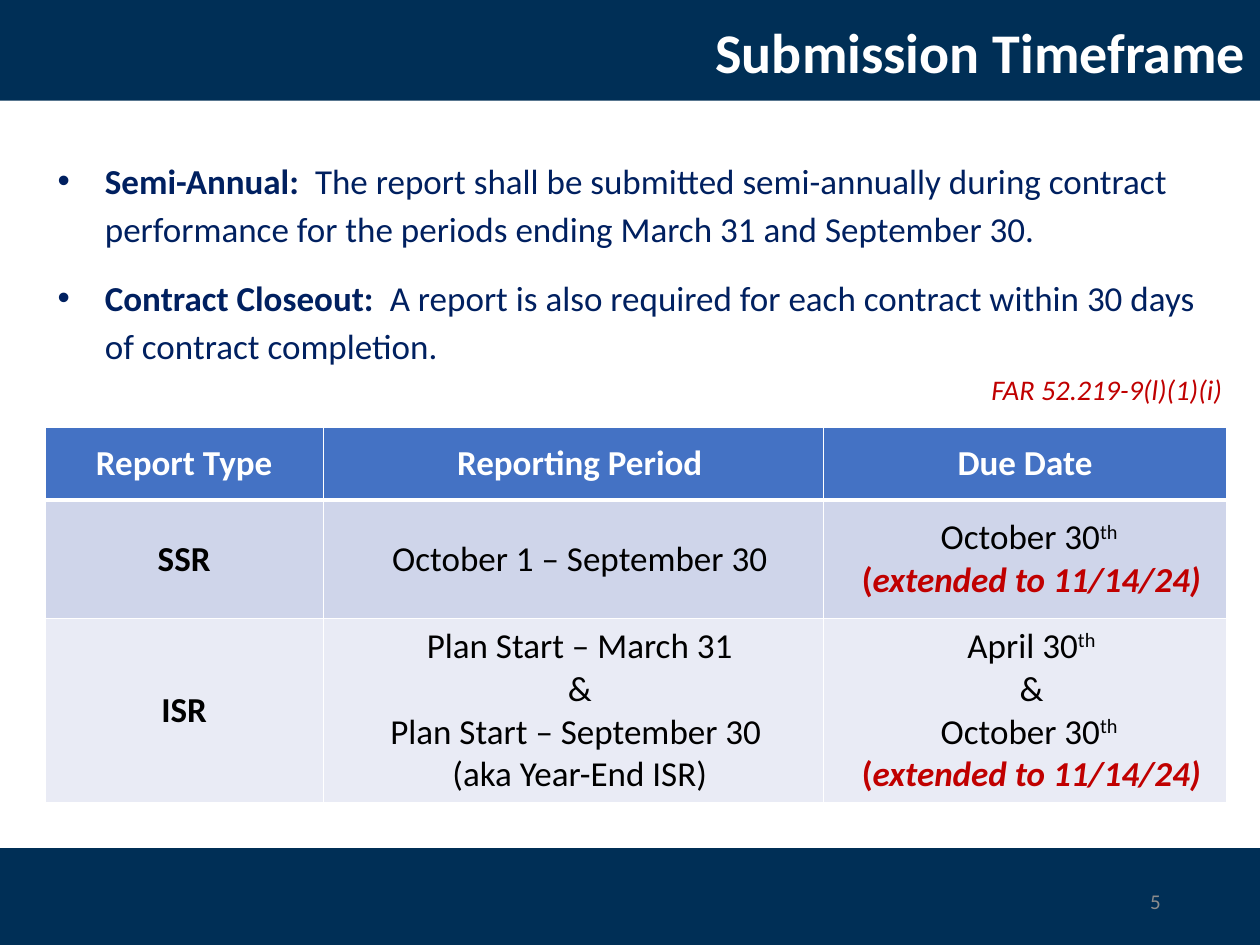
from dataclasses import dataclass

from lxml.etree import SubElement
from pptx import Presentation
from pptx.dml.color import RGBColor
from pptx.enum.shapes import MSO_SHAPE
from pptx.enum.text import MSO_ANCHOR, MSO_AUTO_SIZE, PP_ALIGN
from pptx.oxml.ns import qn
from pptx.util import Cm, Pt


@dataclass(frozen=True)
class Theme:
    font: str = "Calibri"
    band: str = "002F56"
    body: str = "002060"
    accent: str = "C00000"
    header: str = "4472C4"
    rows: tuple = ("CFD5EA", "E9EBF5")
    white: str = "FFFFFF"
    black: str = "000000"
    muted: str = "8C8C8C"
    title_size: int = 32
    text_size: int = 20
    cite_size: int = 28
    number_size: int = 12


class SlideBuilder:
    """Holds the theme and the current slide and draws each kind of element."""

    def __init__(self, s, theme):
        self.s, self.theme = s, theme

    def place(self, sp, x, y, w, h):
        sp.left, sp.top, sp.width, sp.height = Cm(x), Cm(y), Cm(w), Cm(h)

    def add_runs(self, p, runs, size, color, align=PP_ALIGN.LEFT):
        p.alignment = align
        for text, style in runs:
            r = p.add_run()
            r.text = text
            f = r.font
            f.name, f.size = self.theme.font, Pt(size)
            f.bold, f.italic = "b" in style, "i" in style
            f.color.rgb = RGBColor.from_string(self.theme.accent if "!" in style else color)
            if "^" in style:
                r._r.get_or_add_rPr().set("baseline", "30000")

    def paragraphs(self, tf, count):
        return [tf.paragraphs[0]] + [tf.add_paragraph() for _ in range(count - 1)]

    def band(self, y, h):
        sp = self.s.shapes.add_shape(MSO_SHAPE.RECTANGLE, 0, Cm(y), Cm(25.4), Cm(h))
        sp.shadow.inherit = False
        sp.fill.solid()
        sp.fill.fore_color.rgb = RGBColor.from_string(self.theme.band)
        sp.line.fill.background()
        sp.element.getparent().insert(2, sp.element)

    def title(self, text, *box):
        sp = self.s.shapes.title
        self.place(sp, *box)
        tf = sp.text_frame
        tf.auto_size, tf.vertical_anchor = MSO_AUTO_SIZE.NONE, MSO_ANCHOR.MIDDLE
        p = tf.paragraphs[0]
        p.line_spacing = 0.9
        self.add_runs(p, [(text, "b")], self.theme.title_size, self.theme.white, PP_ALIGN.RIGHT)

    def body(self, items, citation, *box):
        sp = self.s.placeholders[1]
        self.place(sp, *box)
        tf = sp.text_frame
        tf.auto_size, tf.vertical_anchor = MSO_AUTO_SIZE.NONE, MSO_ANCHOR.TOP
        *points, cite = self.paragraphs(tf, len(items) + 1)
        for p, (lead, text) in zip(points, items):
            self.bullet(p, Cm(0.95), "•")
            p.line_spacing = 1.14
            p.space_after = Pt(12 if p is not points[-1] else 0)
            self.add_runs(p, [(lead, "b"), (text, "")], self.theme.text_size, self.theme.body)
        self.bullet(cite, 0)
        self.add_runs(cite, [(citation, "i^!")], self.theme.cite_size, self.theme.body,
                      PP_ALIGN.RIGHT)

    def bullet(self, p, indent, char=None):
        p.space_before = Pt(0)
        pPr = p._p.get_or_add_pPr()
        pPr.set("marL", str(indent))
        pPr.set("indent", str(-indent))
        if char:
            SubElement(pPr, qn("a:buFont"), typeface="Arial")
            SubElement(pPr, qn("a:buChar"), char=char)
        else:
            SubElement(pPr, qn("a:buNone"))

    def borders(self, cell, row):
        tcPr = cell._tc.get_or_add_tcPr()
        widths = {"L": 1, "R": 1, "T": 3 if row == 1 else 1, "B": 3 if row == 0 else 1}
        for side, width in widths.items():
            ln = SubElement(tcPr, qn(f"a:ln{side}"), w=str(Pt(width)))
            SubElement(SubElement(ln, qn("a:solidFill")), qn("a:srgbClr"), val=self.theme.white)

    def table(self, rows, x, y, widths, heights):
        t = self.theme
        table = self.s.shapes.add_table(len(rows), len(widths), Cm(x), Cm(y),
                                        Cm(sum(widths)), Cm(sum(heights))).table
        for column, w in zip(table.columns, widths):
            column.width = Cm(w)
        for i, (row, h) in enumerate(zip(rows, heights)):
            table.rows[i].height = Cm(h)
            for j, lines in enumerate(row):
                cell = table.cell(i, j)
                self.borders(cell, i)
                cell.fill.solid()
                cell.fill.fore_color.rgb = RGBColor.from_string(t.rows[i - 1] if i else t.header)
                cell.vertical_anchor = MSO_ANCHOR.MIDDLE
                wide = j == 1 or (i and j == 2)
                cell.margin_left = Cm(0.51 if wide else 0.25)
                for p, runs in zip(self.paragraphs(cell.text_frame, len(lines)), lines):
                    self.add_runs(p, runs, t.text_size, t.black if i else t.white,
                                  PP_ALIGN.CENTER)

    def number(self, text, *box):
        sp = self.s.shapes.add_textbox(*map(Cm, box))
        tf = sp.text_frame
        tf.word_wrap, tf.vertical_anchor = True, MSO_ANCHOR.MIDDLE
        self.add_runs(tf.paragraphs[0], [(text, "")], self.theme.number_size, self.theme.muted,
                      PP_ALIGN.RIGHT)


def main():
    prs = Presentation()
    prs.slide_width, prs.slide_height = Cm(25.4), Cm(19.05)
    b = SlideBuilder(prs.slides.add_slide(prs.slide_layouts[1]), Theme())
    b.band(17.1, 1.95)
    b.band(0, 2.03)
    b.title("Submission Timeframe", 6.55, 0.13, 18.82, 1.96)
    b.body([
        ("Semi-Annual:  ", "The report shall be submitted semi-annually during contract "
                           "performance for the periods ending March 31 and September 30."),
        ("Contract Closeout:  ", "A report is also required for each contract within 30 days "
                                 "of contract completion."),
    ], "FAR 52.219-9(l)(1)(i)", 0.91, 2.97, 23.98, 5.64)

    both = [("&", "")]
    october = [("October 30", ""), ("th ", "^")]
    extended = [("(", "b!"), ("extended to 11/14/24)", "bi!")]
    periods = ["Plan Start – March 31", "&", "Plan Start – September 30 ", "(aka Year-End ISR)"]
    b.table([
        [[[(name, "b")]] for name in ("Report Type", "Reporting Period", "Due Date")],
        [[[("SSR", "b")]], [[("October 1 – September 30", "")]], [october, extended]],
        [[[("ISR", "b")]], [[(line, "")] for line in periods],
         [[("April 30", ""), ("th", "^")], both, october, extended]],
    ], 0.91, 8.61, (5.61, 10.08, 8.13), (1.47, 2.39, 3.18))
    b.number("5", 17.93, 17.65, 5.72, 1.02)
    prs.save("out.pptx")


if __name__ == "__main__":
    main()
